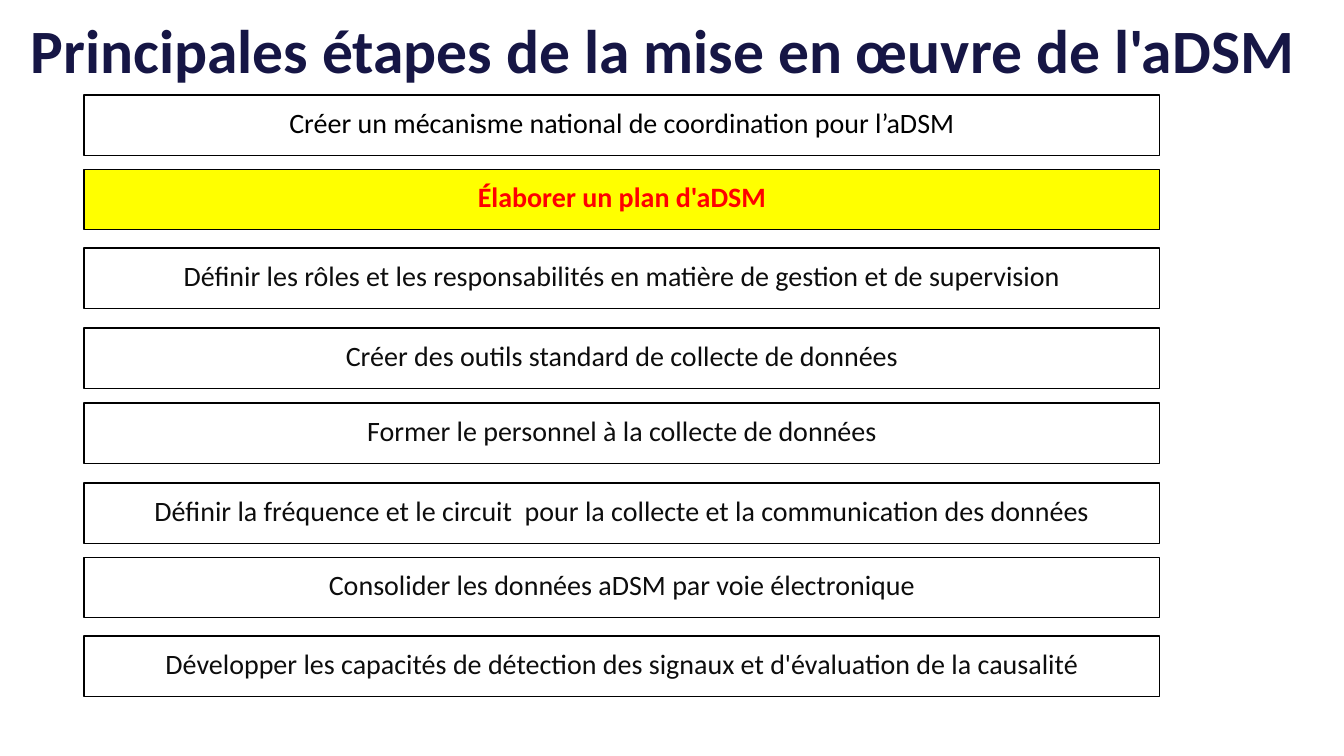
from pptx import Presentation
from pptx.dml.color import RGBColor
from pptx.enum.shapes import MSO_SHAPE
from pptx.enum.text import MSO_ANCHOR, MSO_AUTO_SIZE, PP_ALIGN
from pptx.util import Pt

RECTANGLE = MSO_SHAPE.RECTANGLE
CENTER = PP_ALIGN.CENTER
TOP, MIDDLE = MSO_ANCHOR.TOP, MSO_ANCHOR.MIDDLE
NO_AUTOFIT = MSO_AUTO_SIZE.NONE

# Content
TITLE = "Principales étapes de la mise en œuvre de l'aDSM"
STEPS = [  # top in px, wording
    (95, "Créer un mécanisme national de coordination pour l’aDSM"),
    (169, "Élaborer un plan d'aDSM"),
    (248, "Définir les rôles et les responsabilités en matière de gestion et de supervision"),
    (328, "Créer des outils standard de collecte de données"),
    (403, "Former le personnel à la collecte de données"),
    (483, "Définir la fréquence et le circuit  pour la collecte et la communication des données"),
    (557, "Consolider les données aDSM par voie électronique"),
    (636, "Développer les capacités de détection des signaux et d'évaluation de la causalité"),
]
# Step index: fill (None is unfilled), text colour, bold
STEP_STYLES = {0: (None, "000000", False), 1: ("FFFF00", "FF0000", True)}
PLAIN_STYLE = ("FFFFFF", "0D0D0D", False)

# Layout in px
SLIDE_W, SLIDE_H = 1344, 756
TITLE_BOX = (13, 5, 1301, 88)
STEP_LEFT, STEP_W, STEP_H = 84, 1076, 61
FONT = "Calibri"


def px(length):
    return round(length * 914400 / 100.8)


def rgb(value):
    return RGBColor.from_string(value)


def write(shape, text, size, color, bold, anchor):
    frame = shape.text_frame
    frame.word_wrap = True
    frame.auto_size = NO_AUTOFIT
    frame.vertical_anchor = anchor
    frame.margin_left = frame.margin_right = px(10)
    frame.margin_top = frame.margin_bottom = px(5)
    paragraph = frame.paragraphs[0]
    paragraph.alignment = CENTER
    run = paragraph.add_run()
    run.text = text
    run.font.name = FONT
    run.font.size = Pt(size)
    run.font.bold = bold
    run.font.color.rgb = rgb(color)
    return paragraph


prs = Presentation()
prs.slide_width, prs.slide_height = px(SLIDE_W), px(SLIDE_H)
slide = prs.slides.add_slide(prs.slide_layouts[5])

# Title
title = slide.shapes.title
title.left, title.top, title.width, title.height = map(px, TITLE_BOX)
write(title, TITLE, 44, "161645", True, MIDDLE)

# Steps
for index, (top, wording) in enumerate(STEPS):
    fill, color, bold = STEP_STYLES.get(index, PLAIN_STYLE)
    step = slide.shapes.add_shape(
        RECTANGLE, px(STEP_LEFT), px(top), px(STEP_W), px(STEP_H))
    step.shadow.inherit = False
    if fill:
        step.fill.solid()
        step.fill.fore_color.rgb = rgb(fill)
    else:
        step.fill.background()
    step.line.color.rgb = rgb("000000")
    step.line.width = Pt(0.75)
    paragraph = write(step, wording, 20, color, bold, TOP)
    paragraph.line_spacing = 1.15
    paragraph.space_after = Pt(10)

prs.save("out.pptx")
